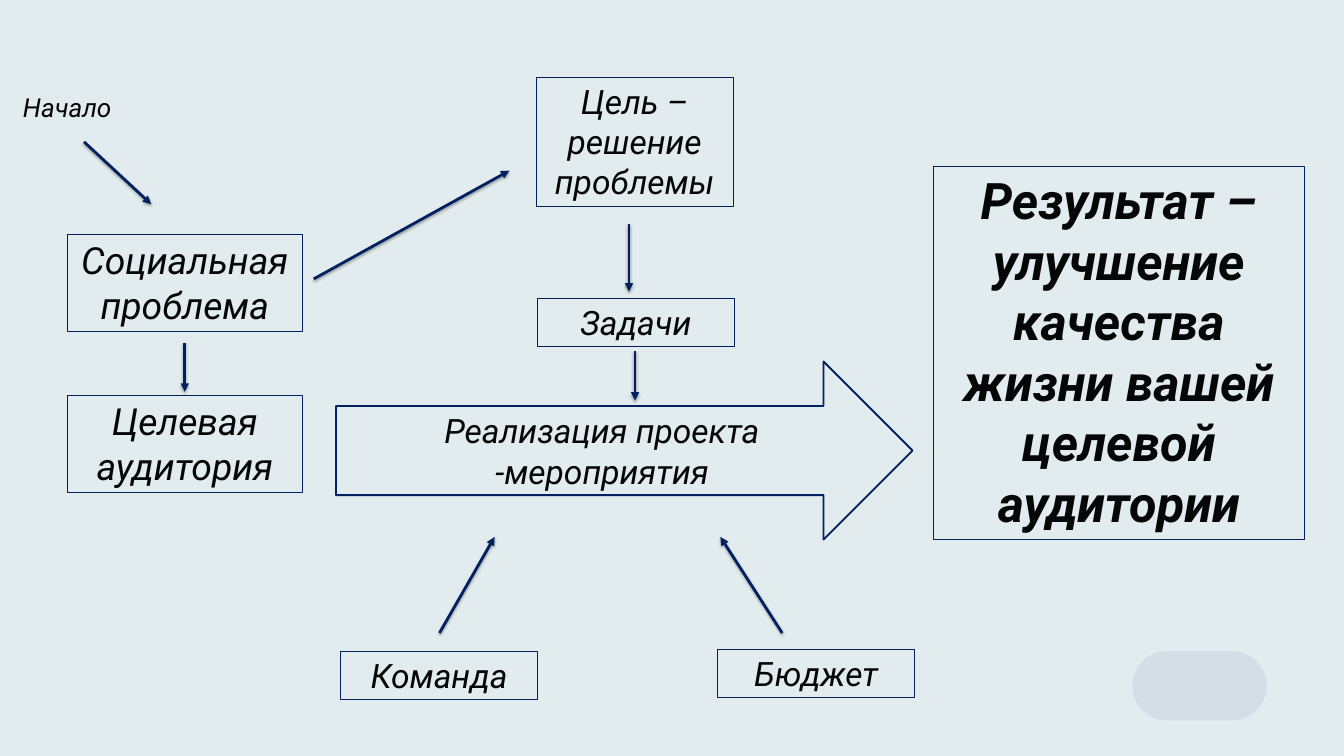
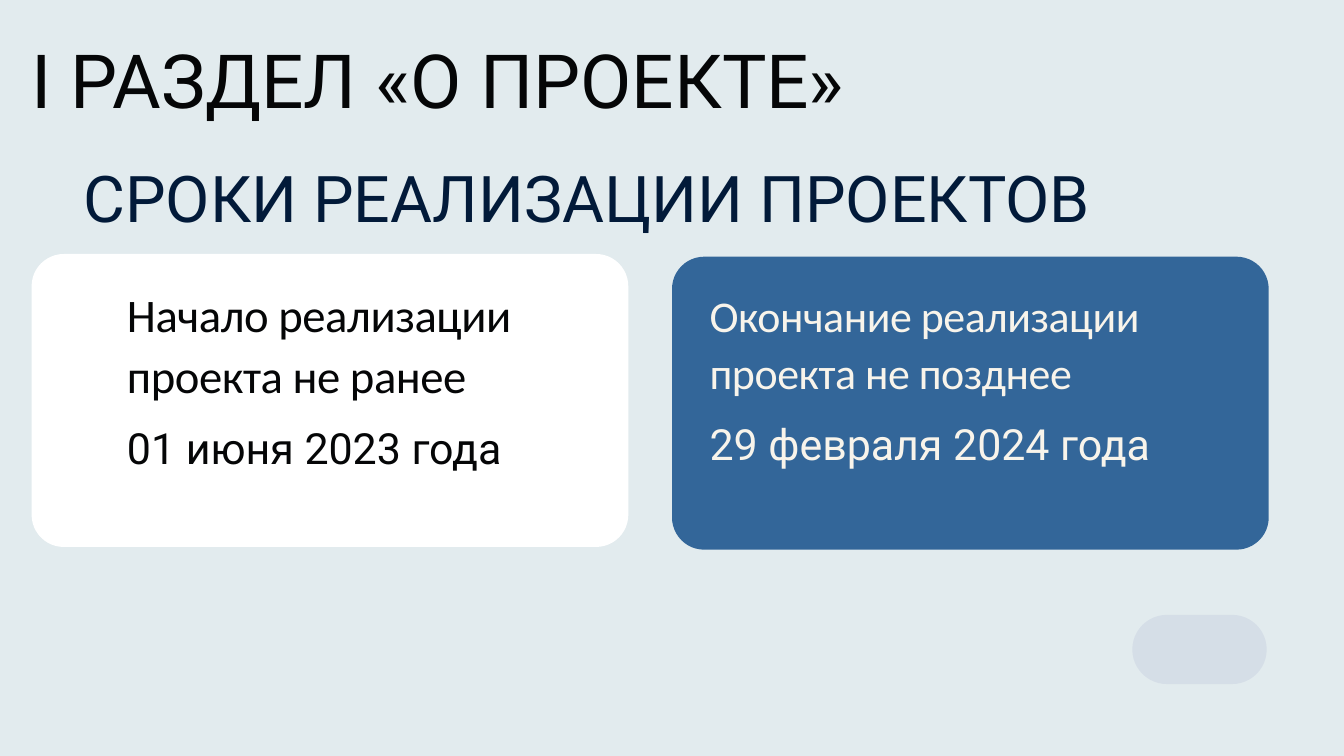
from dataclasses import dataclass

from lxml.etree import SubElement
from pptx import Presentation
from pptx.dml.color import RGBColor
from pptx.enum.shapes import MSO_CONNECTOR, MSO_SHAPE
from pptx.enum.text import MSO_ANCHOR, PP_ALIGN
from pptx.oxml.ns import qn
from pptx.util import Inches, Pt

COLUMNS, ROWS = 20, 11.25
CELL = Inches(1)
TITLE_ONLY, BLANK = 5, 6


@dataclass(frozen=True)
class Theme:
    background: str = "E2EBEE"
    ink: str = "050607"
    navy: str = "002060"
    heading: str = "021A39"
    white: str = "FFFFFF"
    blue: str = "336699"
    cream: str = "F8F4EB"
    pill: str = "454699"
    font: str = "Roboto"
    card_font: str = "Calibri"
    title: int = 80
    subtitle: int = 69
    result: int = 54
    large: int = 40
    medium: int = 36
    label: int = 28
    date: int = 46


THEME = Theme()


def cells(*values):
    """Turn grid columns and rows into slide lengths."""
    return [round(value * CELL) for value in values]


def write_text(shape, text, *, size, color=THEME.ink, font=THEME.font, bold=False,
               italic=False, align=PP_ALIGN.LEFT, anchor=MSO_ANCHOR.TOP,
               line_spacing=None, tracking=None, margins=True, wrap=True):
    frame = shape.text_frame
    frame.word_wrap = wrap
    frame.vertical_anchor = anchor
    if not margins:
        frame.margin_left = frame.margin_right = 0
        frame.margin_top = frame.margin_bottom = 0
    paragraph = frame.paragraphs[0]
    paragraph.text = text
    paragraph.alignment = align
    if line_spacing:
        paragraph.line_spacing = Pt(line_spacing)
    for run in paragraph.runs:
        run.font.name = font
        run.font.size = Pt(size)
        run.font.bold = bold
        run.font.italic = italic
        run.font.color.rgb = RGBColor.from_string(color)
        if tracking:
            run._r.get_or_add_rPr().set("spc", str(round(tracking * 100)))


def add_text(slide, area, text, **style):
    write_text(slide.shapes.add_textbox(*cells(*area)), text, **style)


def add_figure(slide, kind, area, fill=None, line_width=None):
    shape = slide.shapes.add_shape(kind, *cells(*area))
    shape.shadow.inherit = False
    if fill:
        shape.fill.solid()
        shape.fill.fore_color.rgb = RGBColor.from_string(fill)
    else:
        shape.fill.background()
    if line_width:
        shape.line.color.rgb = RGBColor.from_string(THEME.navy)
        shape.line.width = Pt(line_width)
    else:
        shape.line.fill.background()
    return shape


def add_box(slide, area, text, size, bold=False):
    box = add_figure(slide, MSO_SHAPE.RECTANGLE, area, line_width=0.75)
    write_text(box, text, size=size, bold=bold, italic=True, align=PP_ALIGN.CENTER)


def add_arrow(slide, start, end):
    arrow = slide.shapes.add_connector(MSO_CONNECTOR.STRAIGHT, *cells(*start, *end))
    arrow.line.color.rgb = RGBColor.from_string(THEME.navy)
    arrow.line.width = Pt(3)
    properties = arrow._element.spPr
    SubElement(properties.find(qn("a:ln")), qn("a:tailEnd"), type="triangle")
    effects = SubElement(properties, qn("a:effectLst"))
    shadow = SubElement(effects, qn("a:outerShdw"), blurRad=str(Pt(3.1)),
                        dist=str(Pt(1.8)), dir="5400000", rotWithShape="0")
    shade = SubElement(shadow, qn("a:srgbClr"), val="000000")
    SubElement(shade, qn("a:alpha"), val="35000")


def add_pill(slide, top):
    pill = add_figure(slide, MSO_SHAPE.ROUNDED_RECTANGLE, (16.85, top, 2, 1.03), THEME.pill)
    pill.adjustments[0] = 0.5
    color = pill._element.spPr.find(qn("a:solidFill"))[0]
    SubElement(color, qn("a:alpha"), val="8000")


def add_date_card(slide, left, top, fill, color, indent, condition, size, spacing,
                  date, date_offset):
    card = add_figure(slide, MSO_SHAPE.ROUNDED_RECTANGLE, (left, top, 8.88, 4.36), fill)
    card.adjustments[0] = 0.11
    text_left, text_width = left + indent, 8.88 - indent
    add_text(slide, (text_left, top + 0.41, text_width, 1.7), condition, size=size,
             color=color, font=THEME.card_font, line_spacing=spacing, tracking=-0.5,
             margins=False)
    add_text(slide, (text_left, top + date_offset, text_width, 0.91), date,
             size=THEME.date, color=color, line_spacing=65.3, margins=False)


def build_scheme(presentation):
    slide = presentation.slides.add_slide(presentation.slide_layouts[BLANK])
    add_pill(slide, 9.69)

    for top, text in ((3.48, "Социальная проблема"), (5.88, "Целевая аудитория")):
        add_box(slide, (1, top, 3.5, 1.45), text, THEME.large)
    for left, top, height, text in (
        (7.98, 1.15, 1.92, "Цель – решение проблемы"),
        (8, 4.44, 0.71, "Задачи"),
        (10.68, 9.67, 0.71, "Бюджет"),
        (5.07, 9.69, 0.71, "Команда"),
    ):
        add_box(slide, (left, top, 2.93, height), text, THEME.medium)
    add_box(slide, (13.89, 2.47, 5.52, 5.55),
            "Результат – улучшение качества жизни вашей целевой аудитории",
            THEME.result, bold=True)

    project = add_figure(slide, MSO_SHAPE.RIGHT_ARROW, (5, 5.38, 8.58, 2.65), line_width=2)
    write_text(project, "Реализация проекта\v-мероприятия", size=THEME.medium,
               italic=True, align=PP_ALIGN.CENTER, anchor=MSO_ANCHOR.MIDDLE)

    for start, end in (
        ((4.67, 4.15), (7.58, 2.54)),
        ((6.54, 9.42), (7.36, 7.99)),
        ((11.64, 9.42), (10.72, 7.99)),
        ((9.36, 3.34), (9.36, 4.34)),
        ((9.45, 5.23), (9.45, 5.96)),
        ((2.75, 5.11), (2.75, 5.83)),
        ((1.25, 2.11), (2.25, 3.04)),
    ):
        add_arrow(slide, start, end)
    add_text(slide, (0.21, 1.31, 1.58, 0.57), "Начало", size=THEME.label,
             italic=True, align=PP_ALIGN.CENTER, wrap=False)


def build_dates(presentation):
    slide = presentation.slides.add_slide(presentation.slide_layouts[TITLE_ONLY])
    title = slide.shapes.title
    title.left, title.top, title.width, title.height = cells(0.47, 0.43, 15.72, 2.76)
    write_text(title, "I РАЗДЕЛ «О ПРОЕКТЕ»", size=THEME.title, line_spacing=100.8,
               margins=False)
    add_text(slide, (1.24, 2.29, 17.08, 1.19), "СРОКИ РЕАЛИЗАЦИИ ПРОЕКТОВ",
             size=THEME.subtitle, color=THEME.heading, line_spacing=86.9, margins=False)
    add_date_card(slide, 0.47, 3.78, THEME.white, THEME.ink, indent=1.42,
                  condition="Начало реализации проекта не ранее", size=50, spacing=65,
                  date="01 июня 2023 года", date_offset=2.35)
    add_date_card(slide, 10, 3.82, THEME.blue, THEME.cream, indent=0.56,
                  condition="Окончание реализации проекта не позднее", size=47,
                  spacing=61.1, date="29 февраля 2024 года", date_offset=2.25)
    add_pill(slide, 9.15)


def main():
    presentation = Presentation()
    presentation.slide_width, presentation.slide_height = cells(COLUMNS, ROWS)
    background = presentation.slide_master.background.fill
    background.solid()
    background.fore_color.rgb = RGBColor.from_string(THEME.background)
    build_scheme(presentation)
    build_dates(presentation)
    presentation.save("out.pptx")


if __name__ == "__main__":
    main()
